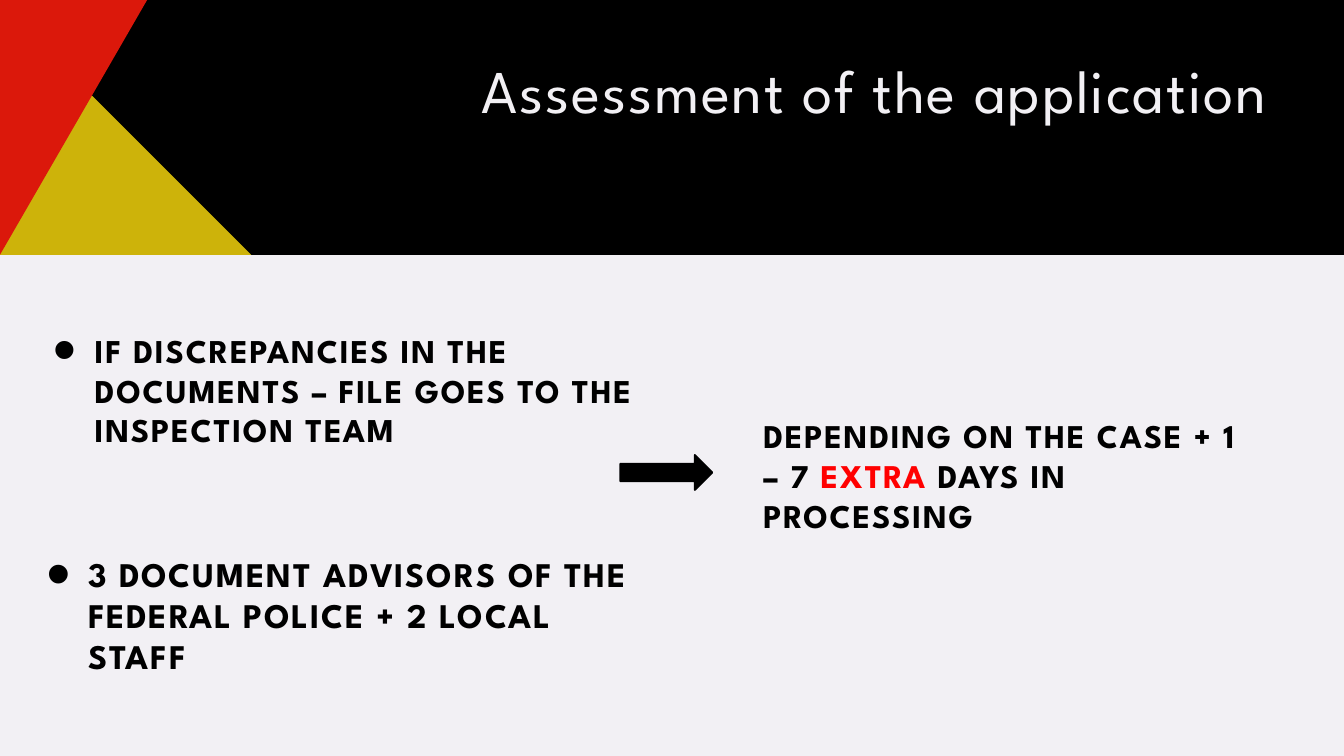
from lxml.etree import SubElement
from pptx import Presentation
from pptx.dml.color import RGBColor
from pptx.enum.shapes import MSO_SHAPE
from pptx.enum.text import MSO_ANCHOR, PP_ALIGN
from pptx.oxml.ns import qn
from pptx.util import Pt

COLORS = {
    "paper": "F2F0F4",
    "black": "000000",
    "gold": "F1D30C",
    "red": "DB180B",
    "accent": "FF0000",
}
FONT = "League Spartan"
BULLET_INDENT = 44.64


def color(name):
    return RGBColor.from_string(COLORS[name])


def paint(shape, name, line_width=0):
    shape.shadow.inherit = False
    shape.fill.solid()
    shape.fill.fore_color.rgb = color(name)
    if line_width:
        shape.line.color.rgb = color(name)
        shape.line.width = Pt(line_width)
    else:
        shape.line.fill.background()


def add_triangle(slide, points, name):
    corners = [(Pt(x), Pt(y)) for x, y in points]
    builder = slide.shapes.build_freeform(*corners[0])
    builder.add_line_segments(corners[1:], close=True)
    shape = builder.convert_to_shape()
    paint(shape, name)
    return shape


def add_text(slide, box, runs, size, line_height, tracking, bold=True,
             align=PP_ALIGN.LEFT, inset=(0, 0), bullet=False):
    """Place one paragraph; runs are (text, color name) pairs."""
    frame = slide.shapes.add_textbox(*map(Pt, box)).text_frame
    horizontal, vertical = map(Pt, inset)
    frame_format = {
        "word_wrap": True,
        "vertical_anchor": MSO_ANCHOR.TOP,
        "margin_left": horizontal,
        "margin_right": horizontal,
        "margin_top": vertical,
        "margin_bottom": vertical,
    }
    for attribute, value in frame_format.items():
        setattr(frame, attribute, value)

    paragraph = frame.paragraphs[0]
    paragraph.alignment = align
    paragraph.line_spacing = Pt(line_height)
    if bullet:
        properties = paragraph._p.get_or_add_pPr()
        properties.set("marL", str(Pt(BULLET_INDENT)))
        properties.set("indent", str(-Pt(BULLET_INDENT)))
        SubElement(properties, qn("a:buSzPct"), val="200000")
        SubElement(properties, qn("a:buFont"), typeface="Arial")
        SubElement(properties, qn("a:buChar"), char="•")

    for text, name in runs:
        run = paragraph.add_run()
        run.text = text
        for attribute, value in {"name": FONT, "size": Pt(size), "bold": bold}.items():
            setattr(run.font, attribute, value)
        run.font.color.rgb = color(name)
        run.font._element.set("spc", str(round(tracking * 100)))


def add_header(slide, left, top, width, height):
    # Black band, running a little past the left edge
    overhang = 18
    band = slide.shapes.add_shape(
        MSO_SHAPE.RECTANGLE, *map(Pt, (left - overhang, top, width + overhang, height)))
    paint(band, "black")

    # Translucent gold corner under the red triangle
    bottom = top + height
    gold = add_triangle(
        slide, [(left + 269, bottom), (left, bottom), (left, top + 4)], "gold")
    fill_color = gold._element.spPr.find(qn("a:solidFill"))[0]
    SubElement(fill_color, qn("a:alpha"), val="85000")

    # Red triangle pointing down to the corner of the band
    half_width, rise = 166.3, 15
    add_triangle(
        slide,
        [(left + half_width, top - rise), (left, bottom), (left - half_width, top - rise)],
        "red")

    add_text(slide, (left + 474.5, top + 44, 884, 181),
             [("Assessment of the application", "paper")],
             size=65, line_height=91, tracking=1.9, bold=False, align=PP_ALIGN.RIGHT)


def add_causes(slide, left, top, width):
    add_text(slide, (left, top, width, 137.5),
             [("IF DISCREPANCIES IN THE DOCUMENTS – FILE GOES TO THE INSPECTION TEAM", "black")],
             size=35.6, line_height=42.7, tracking=1.8, inset=(7.2, 3.6), bullet=True)
    add_text(slide, (left, top + 242, width, 133),
             [("3 DOCUMENT ADVISORS OF THE FEDERAL POLICE + 2 LOCAL STAFF", "black")],
             size=37, line_height=44.4, tracking=1.9, bullet=True)


def add_outcome(slide, left, top, width, height):
    # Arrow from the causes, then the result
    arrow = slide.shapes.add_shape(
        MSO_SHAPE.RIGHT_ARROW, *map(Pt, (left, top + 42.5, 98.6, 37.4)))
    paint(arrow, "black", line_width=2)
    text_offset = 153.4
    add_text(slide, (left + text_offset, top, width - text_offset, height),
             [("DEPENDING ON THE CASE + 1 – 7 ", "black"),
              ("EXTRA", "accent"),
              (" DAYS IN PROCESSING", "black")],
             size=35.5, line_height=42.6, tracking=1.8)


def main():
    presentation = Presentation()
    presentation.slide_width, presentation.slide_height = Pt(1440), Pt(810)
    slide = presentation.slides.add_slide(presentation.slide_layouts[6])
    slide.background.fill.solid()
    slide.background.fill.fore_color.rgb = color("paper")

    add_header(slide, 0, 0, 1440, 273)
    add_causes(slide, 49.7, 350, 647.3)
    add_outcome(slide, 664.6, 445, 682.6, 130.3)
    presentation.save("out.pptx")


if __name__ == "__main__":
    main()
